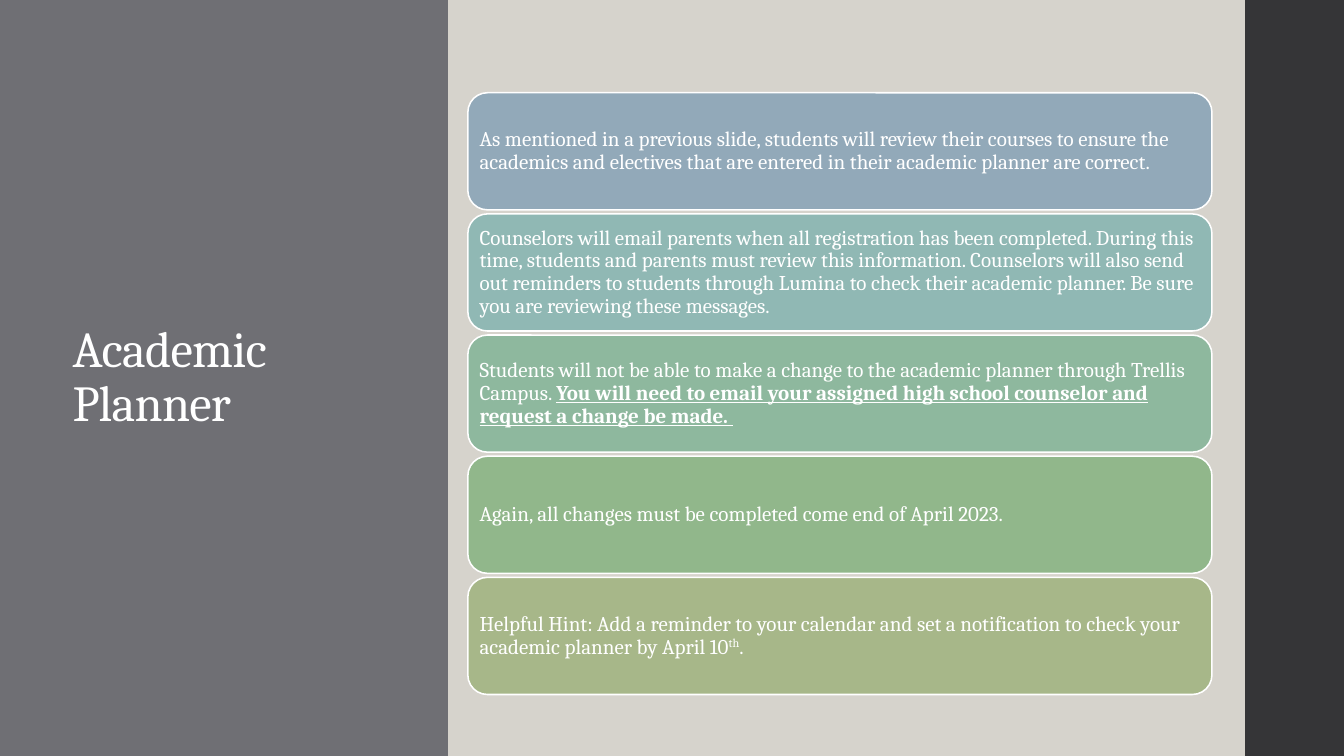
from pptx import Presentation
from pptx.dml.color import RGBColor
from pptx.enum.shapes import MSO_SHAPE as Preset
from pptx.enum.text import MSO_ANCHOR as Anchor
from pptx.util import Inches, Pt

WIDTH, HEIGHT = 13.33, 7.5
FONT = "Cambria"
WHITE = RGBColor(0xFF, 0xFF, 0xFF)
SAND = RGBColor(0xD6, 0xD3, 0xCC)
GREY = RGBColor(0x6F, 0x6F, 0x74)
CHARCOAL = RGBColor(0x35, 0x35, 0x37)
BLUE = RGBColor(0x92, 0xA9, 0xB9)
TEAL = RGBColor(0x90, 0xB8, 0xB4)
MINT = RGBColor(0x8E, 0xB8, 0x9E)
GREEN = RGBColor(0x91, 0xB7, 0x8B)
OLIVE = RGBColor(0xA7, 0xB7, 0x89)

STRONG = {"bold": True, "underline": True}
RAISED = {"baseline": 30000}
STEPS = [
    (BLUE, [("As mentioned in a previous slide, students will review their courses to ensure "
             "the academics and electives that are entered in their academic planner are "
             "correct.", {})]),
    (TEAL, [("Counselors will email parents when all registration has been completed. During "
             "this time, students and parents must review this information. Counselors will "
             "also send out reminders to students through Lumina to check their academic "
             "planner. Be sure you are reviewing these messages.", {})]),
    (MINT, [("Students will not be able to make a change to the academic planner through "
             "Trellis Campus. ", {}),
            ("You will need to email your assigned high school counselor and request a "
             "change be made. ", STRONG)]),
    (GREEN, [("Again, all changes must be completed come end of April 2023.", {})]),
    (OLIVE, [("Helpful Hint: Add a reminder to your calendar and set a notification to check "
              "your academic planner by April 10", {}), ("th", RAISED), (".", {})]),
]


def add_span(para, text, size, bold=False, underline=False, baseline=None, spacing=None):
    span = para.add_run()
    span.text = text
    font = span.font
    font.name, font.size, font.bold, font.underline = FONT, Pt(size), bold, underline
    font.color.rgb = WHITE
    for name, value in (("baseline", baseline), ("spc", spacing)):
        if value is not None:
            font._element.set(name, str(value))


def write_text(shape, spans, size, inset=None, **style):
    frame = shape.text_frame
    frame.word_wrap = True
    frame.vertical_anchor = Anchor.MIDDLE
    if inset is not None:
        frame.margin_left = frame.margin_right = Inches(inset)
        frame.margin_top = frame.margin_bottom = Inches(inset)
    para = frame.paragraphs[0]
    para.alignment = 1
    para.line_spacing = 0.9
    for text, emphasis in spans:
        add_span(para, text, size, **style, **emphasis)


def add_panel(page, box, color, preset=Preset.RECTANGLE, outline=None):
    panel = page.shapes.add_shape(preset, *map(Inches, box))
    panel.shadow.inherit = False
    panel.fill.solid()
    panel.fill.fore_color.rgb = color
    if outline is None:
        panel.line.fill.background()
    else:
        panel.line.color.rgb = outline
        panel.line.width = Pt(1.1)
    return panel


def add_title_side(page, box):
    left, top, width, height = box
    add_panel(page, box, GREY)
    title = page.shapes.add_textbox(
        Inches(left + 0.14 * width), Inches(top + 0.12 * height),
        Inches(0.67 * width), Inches(0.76 * height))
    write_text(title, [("Academic Planner", {})], 36, spacing=-50)


def add_steps(page, box, gap=0.04):
    left, top, width, height = box
    pitch = (height + gap) / len(STEPS)
    for row, (color, spans) in enumerate(STEPS):
        card = add_panel(page, (left, top + row * pitch, width, pitch - gap), color,
                         Preset.ROUNDED_RECTANGLE, WHITE)
        write_text(card, spans, 15, inset=0.06)


def main():
    deck = Presentation()
    deck.slide_width, deck.slide_height = Inches(WIDTH), Inches(HEIGHT)
    page = deck.slides.add_slide(deck.slide_layouts[6])
    page.background.fill.solid()
    page.background.fill.fore_color.rgb = SAND
    add_title_side(page, (0, 0, WIDTH / 3, HEIGHT))
    add_panel(page, (12.35, 0, WIDTH - 12.35, HEIGHT), CHARCOAL)
    add_steps(page, (4.64, 0.92, 7.38, 5.97))
    deck.save("out.pptx")


if __name__ == "__main__":
    main()
